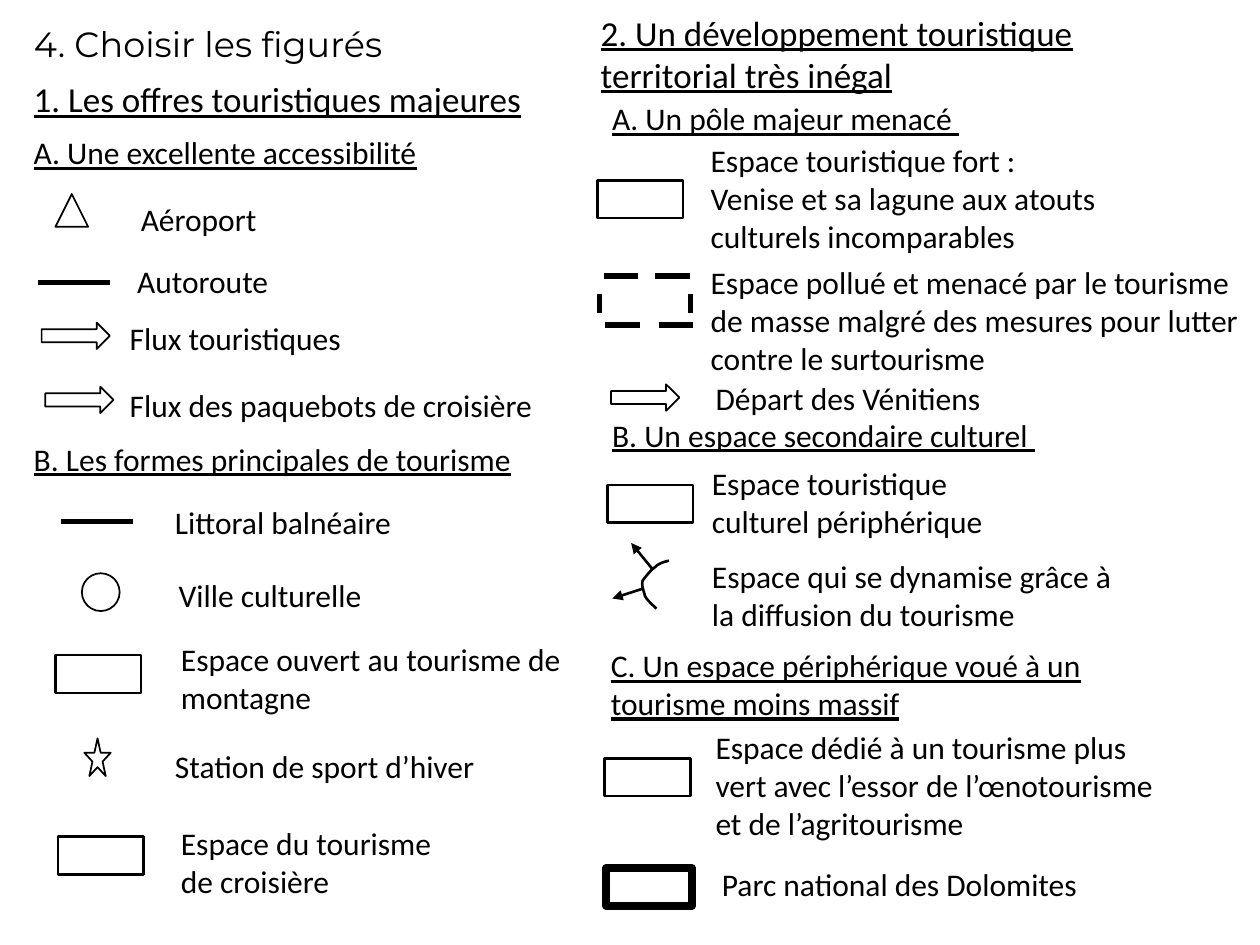
"""Build the map legend slide on tourism, with its symbols and labels."""
import pptx
import pptx.util
import pptx.dml.color
import pptx.enum.shapes
import pptx.enum.text
import pptx.oxml.ns
import pptx.oxml.xmlchemy

Pt = pptx.util.Pt
BLACK = pptx.dml.color.RGBColor(0, 0, 0)
KIND = pptx.enum.shapes.MSO_SHAPE

deck = pptx.Presentation()
deck.slide_width, deck.slide_height = Pt(720), Pt(540)
slide = deck.slides.add_slide(deck.slide_layouts[5])
shapes = slide.shapes


def write(box, text, size, face="Calibri", under=None):
    frame = box.text_frame
    frame.word_wrap = True
    frame.auto_size = pptx.enum.text.MSO_AUTO_SIZE.NONE
    frame.vertical_anchor = pptx.enum.text.MSO_ANCHOR.TOP
    frame.text = text
    for para in frame.paragraphs:
        para.alignment = pptx.enum.text.PP_ALIGN.LEFT
        para.font.size = Pt(size)
        para.font.name = face
        para.font.color.rgb = BLACK
        para.font.underline = under


def draw(start, end, width, arrow=False):
    line = shapes.add_connector(
        pptx.enum.shapes.MSO_CONNECTOR.STRAIGHT, *map(Pt, start + end))
    line.line.color.rgb = BLACK
    line.line.width = Pt(width)
    props = line._element.spPr
    if arrow:
        tail = pptx.oxml.xmlchemy.OxmlElement("a:tailEnd")
        tail.set("type", "triangle")
        props.find(pptx.oxml.ns.qn("a:ln")).append(tail)
    props.append(pptx.oxml.xmlchemy.OxmlElement("a:effectLst"))


title = shapes.title
title.left, title.top, title.width, title.height = map(Pt, (12.2, 9.4, 303, 31.5))
write(title, "4. Choisir les figurés", 20, "Montserrat")

heads = [
    (12.2, 41, 303, 31.5, 20, "1. Les offres touristiques majeures"),
    (12.2, 72.7, 271.5, 29, 18, "A. Une excellente accessibilité"),
    (12.2, 247.7, 317.5, 29, 18, "B. Les formes principales de tourisme"),
    (336.2, 2.9, 303, 55.5, 20, "2. Un développement touristique territorial très inégal"),
    (342.7, 53.3, 271.5, 29, 18, "A. Un pôle majeur menacé "),
    (342.7, 234, 317.5, 29, 18, "B. Un espace secondaire culturel "),
    (342, 365.8, 317.5, 51, 18, "C. Un espace périphérique voué à un tourisme moins massif"),
]
for left, top, width, height, size, text in heads:
    box = shapes.add_textbox(Pt(left), Pt(top), Pt(width), Pt(height))
    write(box, text, size, under=True)

labels = [
    (73.4, 110.9, 172, 29, "Aéroport"),
    (71.3, 146.2, 172, 29, "Autoroute"),
    (67, 178.6, 172, 29, "Flux touristiques"),
    (67, 217, 249, 29, "Flux des paquebots de croisière"),
    (92.9, 283.7, 172, 29, "Littoral balnéaire"),
    (95, 325.6, 191.5, 29, "Ville culturelle"),
    (96.3, 362.2, 237, 51, "Espace ouvert au tourisme de montagne"),
    (92.9, 423.4, 191.5, 29, "Station de sport d’hiver"),
    (96.3, 467.2, 172, 51, "Espace du tourisme de croisière"),
    (399, 77, 271.5, 72.7, "Espace touristique fort :\n"
     "Venise et sa lagune aux atouts culturels incomparables"),
    (399, 147, 316.8, 94.3, "Espace pollué et menacé par le tourisme de masse "
     "malgré des mesures pour lutter contre le surtourisme"),
    (401.8, 213.2, 224.6, 29, "Départ des Vénitiens"),
    (399.7, 261.5, 191.5, 51, "Espace touristique culturel périphérique"),
    (399.7, 314.7, 243.4, 51, "Espace qui se dynamise grâce à la diffusion du tourisme"),
    (401.8, 412.7, 271.5, 72.7, "Espace dédié à un tourisme plus vert "
     "avec l’essor de l’œnotourisme et de l’agritourisme"),
    (405.4, 491, 221.8, 29, "Parc national des Dolomites"),
]
for left, top, width, height, text in labels:
    box = shapes.add_textbox(Pt(left), Pt(top), Pt(width), Pt(height))
    write(box, text, 18)

RECT = (KIND.RECTANGLE, 49, 21.6)
ARROW = (KIND.RIGHT_ARROW, 39, 15.1)
signs = [
    ((KIND.ISOSCELES_TRIANGLE, 18.7, 18.7), 31.7, 110.9, 1),
    (ARROW, 23.8, 184.3, 1),
    (ARROW, 25.9, 221, 1),
    ((KIND.OVAL, 21.6, 21.6), 46.8, 327.6, 1),
    (RECT, 31.7, 374.4, 1.5),
    ((KIND.STAR_5_POINT, 15.1, 21.6), 48.2, 421.9, 1),
    (RECT, 33.1, 478, 1.5),
    (RECT, 341.3, 103, 1.5),
    (ARROW, 349.2, 219.6, 1),
    (RECT, 347, 277.2, 1.5),
    (RECT, 345.6, 433.4, 1.5),
    (RECT, 346.3, 496, 4.5),
]
marks = []
for (kind, width, height), left, top, weight in signs:
    mark = shapes.add_shape(kind, Pt(left), Pt(top), Pt(width), Pt(height))
    marks.append((mark, weight))

curves = [
    [(382.3, 320.4), (379.4, 321.1), (376.6, 321.8), (374.4, 324)],
    [(374.4, 324), (372.2, 325.4), (368.6, 329.8), (367.2, 331.9)],
    [(367.2, 331.9), (366.5, 334.8), (367.9, 337.7), (368.6, 340.6)],
    [(368.6, 340.6), (370.1, 343.4), (373.7, 346.3), (375.1, 347.8)],
]
STEPS = 6
dots = []
for curve in curves:
    for step in range(1, STEPS + 1):
        t = step / STEPS
        parts = ((1 - t) ** 3, 3 * t * (1 - t) ** 2, 3 * t * t * (1 - t), t ** 3)
        dots.append([Pt(sum(part * dot[axis] for part, dot in zip(parts, curve)))
                     for axis in (0, 1)])
arc = shapes.build_freeform(*map(Pt, curves[0][0]))
arc.add_line_segments(dots, close=False)
marks.append((arc.convert_to_shape(), 1.5))

for mark, weight in marks:
    mark.shadow.inherit = False
    mark.fill.background()
    mark.line.color.rgb = BLACK
    mark.line.width = Pt(weight)

for left, top in ((21.6, 161.3), (34.6, 298.1)):
    draw((left, top), (left + 41.5, top), 3)
for left, top in ((344.9, 157.7), (374.4, 157.7), (345.8, 185.8), (376.4, 185.8)):
    draw((left, top), (left + 19.8, top), 3)
for left in (342.7, 394.6):
    draw((left, 167.8), (left, 178.6), 3)
draw((373, 325.4), (360.7, 310.3), 1.5, arrow=True)
draw((367.9, 336.2), (349.9, 342), 1.5, arrow=True)

deck.save("out.pptx")
